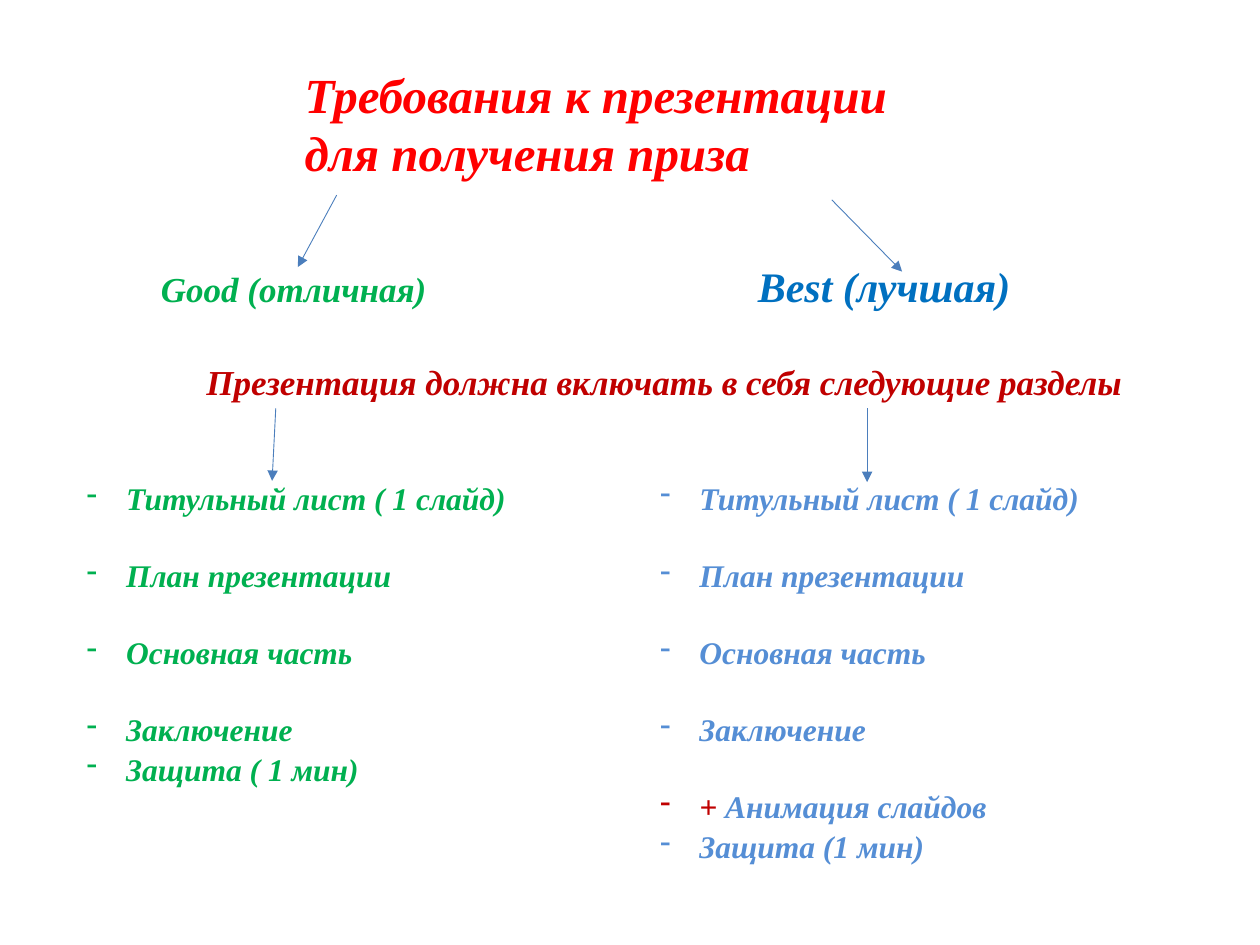
from lxml import etree
from pptx import Presentation
from pptx.dml.color import RGBColor
from pptx.enum.shapes import MSO_CONNECTOR
from pptx.oxml.ns import qn
from pptx.util import Pt

STRAIGHT = MSO_CONNECTOR.STRAIGHT

THEME = {
    "font": "Times New Roman",
    "red": "FF0000", "green": "00B050", "blue": "0070C0",
    "dark_red": "C00000", "light_blue": "558ED5", "arrow": "4B7EBC",
    "title": 28, "best": 24, "heading": 20, "item": 18,
}

TITLE = [("Требования к презентации для получения приза", "title", "red")]
GRADES = [("Good (отличная)", "heading", "green"), ("\t", "heading", "green"),
          ("Best (лучшая)", "best", "blue")]
INTRO = [("Презентация должна включать в себя следующие разделы", "heading", "dark_red")]
SECTIONS = ["Титульный лист ( 1 слайд)", "План презентации", "Основная часть", "Заключение"]


def items(texts, color):
    return [[(text, "item", color)] for text in texts]


GOOD = items(SECTIONS + ["Защита ( 1 мин)"], "green")
BEST = items(SECTIONS, "light_blue") + [
    [("+", "item", "dark_red"), (" Анимация слайдов", "item", "light_blue")],
] + items(["Защита (1 мин)"], "light_blue")

HEADINGS = [
    ((167, 33.1, 385.2, 74.9), TITLE),
    ((84.8, 145.4, 561.6, 36), GRADES),
    ((110.9, 202.3, 629.3, 31.7), INTRO),
]
LISTS = [((42.5, 270, 277.9, 181.4), GOOD), ((370.1, 270, 370.1, 225.4), BEST)]
ARROWS = [
    (192.4, 111.5, 170.2, 152.6), (475.3, 114.2, 515.5, 155.2),
    (157.6, 233.3, 155.5, 274.8), (495.5, 233.3, 495.5, 275.5),
]
GRADE_TAB = 341.2
BULLET_INDENT = 22.5
LOOSE_GAP, TIGHT_GAP = 22.5, 0.9


def add_text(s, box, paragraphs):
    tf = s.shapes.add_textbox(*map(Pt, box)).text_frame
    tf.word_wrap = True
    for i, runs in enumerate(paragraphs):
        p = tf.paragraphs[0] if i == 0 else tf.add_paragraph()
        for text, size, color in runs:
            r = p.add_run()
            r.text = text
            r.font.name = THEME["font"]
            r.font.size = Pt(THEME[size])
            r.font.bold = r.font.italic = True
            r.font.color.rgb = RGBColor.from_string(THEME[color])
    return tf


def add_tab(p, position):
    tabs = etree.SubElement(p._p.get_or_add_pPr(), qn("a:tabLst"))
    etree.SubElement(tabs, qn("a:tab"), pos=str(Pt(position)), algn="l")


def add_list(s, box, paragraphs):
    tf = add_text(s, box, paragraphs)
    for i, p in enumerate(tf.paragraphs):
        p.space_after = Pt(LOOSE_GAP if i < len(paragraphs) - 2 else TIGHT_GAP)
        pPr = p._p.get_or_add_pPr()
        pPr.set("marL", str(Pt(BULLET_INDENT)))
        pPr.set("indent", str(-Pt(BULLET_INDENT)))
        etree.SubElement(pPr, qn("a:buChar"), char="-")


def add_arrow(s, ends):
    sp = s.shapes.add_connector(STRAIGHT, *map(Pt, ends))
    sp.line.color.rgb = RGBColor.from_string(THEME["arrow"])
    sp.line.width = Pt(0.5)
    etree.SubElement(sp.line._get_or_add_ln(), qn("a:tailEnd"), type="triangle")
    etree.SubElement(sp._element.spPr, qn("a:effectLst"))


def main():
    prs = Presentation()
    prs.slide_width, prs.slide_height = Pt(720), Pt(540)
    s = prs.slides.add_slide(prs.slide_layouts[6])
    for box, runs in HEADINGS:
        tf = add_text(s, box, [runs])
        if runs is GRADES:
            add_tab(tf.paragraphs[0], GRADE_TAB)
    for box, paragraphs in LISTS:
        add_list(s, box, paragraphs)
    for ends in ARROWS:
        add_arrow(s, ends)
    prs.save("out.pptx")


if __name__ == "__main__":
    main()
